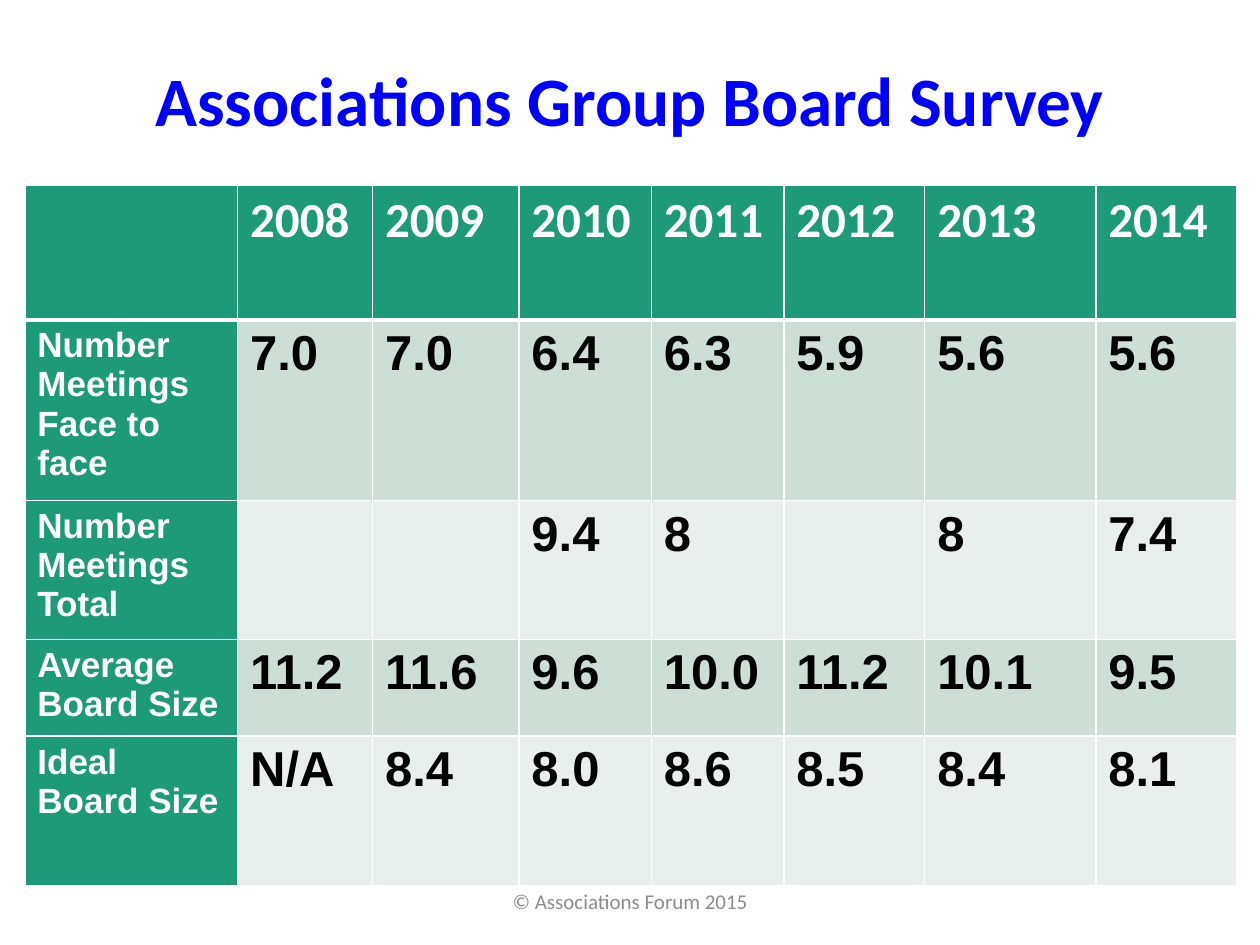
from pptx import Presentation
from pptx.dml.color import RGBColor
from pptx.enum.text import MSO_ANCHOR, PP_ALIGN
from pptx.oxml import parse_xml
from pptx.oxml.ns import nsdecls
from pptx.util import Cm, Pt

TOP, MIDDLE = MSO_ANCHOR.TOP, MSO_ANCHOR.MIDDLE
CENTER = PP_ALIGN.CENTER
COLORS = {
    "title": "0000FF", "note": "8C8C8C", "head": "1D9A78", "odd": "CDDED6",
    "even": "E8EFEC", "white": "FFFFFF", "black": "000000",
}
WIDTHS = [4.29, 2.72, 2.95, 2.67, 2.67, 2.84, 3.45, 2.84]
HEIGHTS = [2.72, 2.51, 2.51, 1.83, 3.02]
SURVEY = [
    ["", "2008", "2009", "2010", "2011", "2012", "2013", "2014"],
    ["Number\nMeetings\nFace to face", "7.0", "7.0", "6.4", "6.3", "5.9", "5.6", "5.6"],
    ["Number\nMeetings\nTotal", "", "", "9.4", "8", "", "8", "7.4"],
    ["Average\nBoard Size", "11.2", "11.6", "9.6", "10.0", "11.2", "10.1", "9.5"],
    ["Ideal\nBoard Size", "N/A", "8.4", "8.0", "8.6", "8.5", "8.4", "8.1"],
]


class Deck:
    """Holds the style and the current slide."""

    def __init__(self):
        self.file = Presentation()
        self.file.slide_width, self.file.slide_height = Cm(25.4), Cm(19.05)
        self.slide = self.file.slides.add_slide(self.file.slide_layouts[6])

    def style(self, frame, text, face, size, color, bold=False):
        frame.text = text
        for para in frame.paragraphs:
            font = para.font
            font.name, font.size, font.bold = face, Pt(size), bold
            font.color.rgb = RGBColor.from_string(COLORS[color])

    def text(self, area, text, size, color, bold=False, anchor=MIDDLE):
        box = self.slide.shapes.add_textbox(*map(Cm, area))
        frame = box.text_frame
        frame.word_wrap, frame.vertical_anchor = True, anchor
        self.style(frame, text, "Calibri", size, color, bold)
        frame.paragraphs[0].alignment = CENTER
        return frame

    def border(self, cell, head):
        props = cell._tc.get_or_add_tcPr()
        for side in "LRTB":
            width = Pt(3 if head and side == "B" else 1)
            props.append(parse_xml(
                f'<a:ln{side} {nsdecls("a")} w="{width}"><a:solidFill>'
                f'<a:srgbClr val="{COLORS["white"]}"/></a:solidFill></a:ln{side}>'))

    def cell(self, cell, text, row, col):
        head = row == 0
        label = head or col == 0
        self.border(cell, head)
        cell.fill.solid()
        fill = "head" if label else "odd" if row % 2 else "even"
        cell.fill.fore_color.rgb = RGBColor.from_string(COLORS[fill])
        self.style(cell.text_frame, text, "Calibri" if head else "Arial",
                   20 if col == 0 else 28, "white" if label else "black", True)

    def table(self, left, top, data, widths, heights):
        area = map(Cm, (left, top, sum(widths), sum(heights)))
        table = self.slide.shapes.add_table(len(heights), len(widths), *area).table
        table.first_col = True
        for col, width in zip(table.columns, widths):
            col.width = Cm(width)
        for row, height in zip(table.rows, heights):
            row.height = Cm(height)
        for r, line in enumerate(data):
            for c, text in enumerate(line):
                self.cell(table.cell(r, c), text, r, c)


def main():
    deck = Deck()
    title = deck.text((1.75, 1.02, 21.9, 3.68), "Associations Group Board Survey",
                      39.6, "title", True, TOP)
    title.margin_top = Cm(0.32)
    title.paragraphs[0].line_spacing = 0.9
    deck.text((8.41, 17.65, 8.59, 1.02), "© Associations Forum 2015", 12, "note")
    deck.table(0.5, 3.73, SURVEY, WIDTHS, HEIGHTS)
    deck.file.save("out.pptx")


if __name__ == "__main__":
    main()
